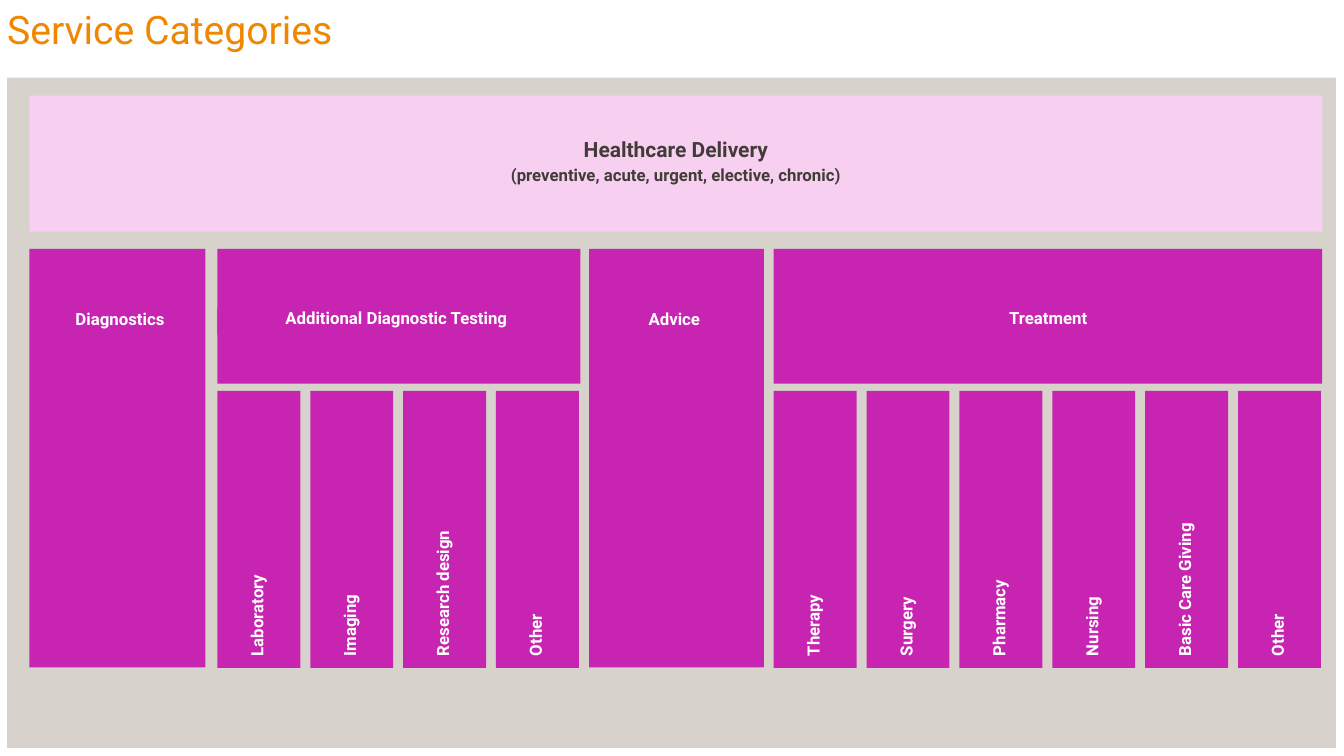
import pptx
import pptx.dml.color
import pptx.enum.shapes
import pptx.enum.text
import pptx.util
from dataclasses import dataclass

Cm = pptx.util.Cm
ALIGN = pptx.enum.text.PP_ALIGN


@dataclass(frozen=True)
class Theme:
    font: str = "Roboto"
    orange: str = "F18700"
    dark: str = "423C38"
    white: str = "FFFFFF"
    sand: str = "D7D2CB"
    pink: str = "F7D0F1"
    magenta: str = "C724B1"
    title: int = 28
    head: int = 15
    label: int = 12


def color(code):
    return pptx.dml.color.RGBColor.from_string(code)


def write(shape, text, *, face, size, ink, bold=True, align=ALIGN.CENTER,
          line=0.93, grow=True):
    """Put one paragraph in a shape; line is a factor or a fixed height."""
    frame = shape.text_frame
    frame.word_wrap = True
    frame.vertical_anchor = pptx.enum.text.MSO_ANCHOR.TOP
    if grow:
        frame.auto_size = pptx.enum.text.MSO_AUTO_SIZE.SHAPE_TO_FIT_TEXT
    par = frame.paragraphs[0]
    par.alignment = align
    par.line_spacing = line
    run = par.add_run()
    run.text = text
    run.font.name = face
    run.font.size = pptx.util.Pt(size)
    run.font.bold = bold
    run.font.color.rgb = color(ink)


class Board:
    """Draws on one slide with one theme; all lengths are centimetres."""

    def __init__(self, slide, theme):
        self.slide = slide
        self.theme = theme

    def panel(self, left, top, width, height, fill):
        shape = self.slide.shapes.add_shape(
            pptx.enum.shapes.MSO_SHAPE.RECTANGLE,
            Cm(left), Cm(top), Cm(width), Cm(height))
        shape.shadow.inherit = False
        shape.fill.solid()
        shape.fill.fore_color.rgb = color(fill)
        shape.line.fill.background()
        return shape

    def text(self, text, left, top, width, height, **style):
        box = self.slide.shapes.add_textbox(
            Cm(left), Cm(top), Cm(width), Cm(height))
        write(box, text, face=self.theme.font, **style)
        return box

    def label(self, text, left, top, width, height, align=ALIGN.CENTER):
        theme = self.theme
        shape = self.panel(left, top, width, height, theme.magenta)
        write(shape, text, face=theme.font, size=theme.label, ink=theme.white,
              align=align, line=pptx.util.Pt(11))
        return shape

    def column(self, text, left):
        """Draw a narrow panel whose label reads upward from its foot."""
        top, width, height = 9.85, 2.09, 6.98
        long, thick = 6.93, 0.69
        self.panel(left, top, width, height, self.theme.magenta)
        mid = left + width / 2 + 0.03
        label = self.label(text, mid - long / 2, 13.32 - thick / 2,
                           long, thick, ALIGN.LEFT)
        label.rotation = 270


# Text, panel left, width and height, label left, top and width
HEADS = [
    ("Diagnostics", 0.74, 4.44, 10.55, 0.89, 7.77, 4.27),
    ("Additional Diagnostic Testing", 5.48, 9.15, 3.4, 5.48, 7.75, 9.02),
    ("Advice", 14.85, 4.4, 10.55, 14.85, 7.77, 4.29),
    ("Treatment", 19.5, 13.82, 3.4, 23.67, 7.75, 5.49),
]
GROUPS = [
    (5.48, ["Laboratory", "Imaging", "Research design", "Other"]),
    (19.5, ["Therapy", "Surgery", "Pharmacy", "Nursing",
            "Basic Care Giving", "Other"]),
]
PITCH = 2.34


def main():
    deck = pptx.Presentation()
    deck.slide_width, deck.slide_height = Cm(33.87), Cm(19.05)
    theme = Theme()
    board = Board(deck.slides.add_slide(deck.slide_layouts[6]), theme)

    title = board.text("Service Categories", 0.18, 0.2, 13.59, 1.24,
                       size=theme.title, ink=theme.orange, bold=False,
                       align=ALIGN.LEFT, grow=False)
    frame = title.text_frame
    frame.margin_left = frame.margin_right = frame.margin_bottom = 0
    frame.margin_top = Cm(0.05)

    board.panel(0.18, 1.96, 33.49, 16.89, theme.sand)
    board.panel(0.74, 2.41, 32.59, 3.43, theme.pink)
    board.text("Healthcare Delivery", 0.74, 3.38, 32.59, 0.86,
               size=theme.head, ink=theme.dark)
    board.text("(preventive, acute, urgent, elective, chronic)",
               0.74, 4.06, 32.59, 0.74, size=theme.label, ink=theme.dark)

    for text, left, width, height, start, top, span in HEADS:
        board.panel(left, 6.27, width, height, theme.magenta)
        board.label(text, start, top, span, 0.69)
    for left, names in GROUPS:
        for i, name in enumerate(names):
            board.column(name, left + i * PITCH)

    deck.save("out.pptx")


if __name__ == "__main__":
    main()
